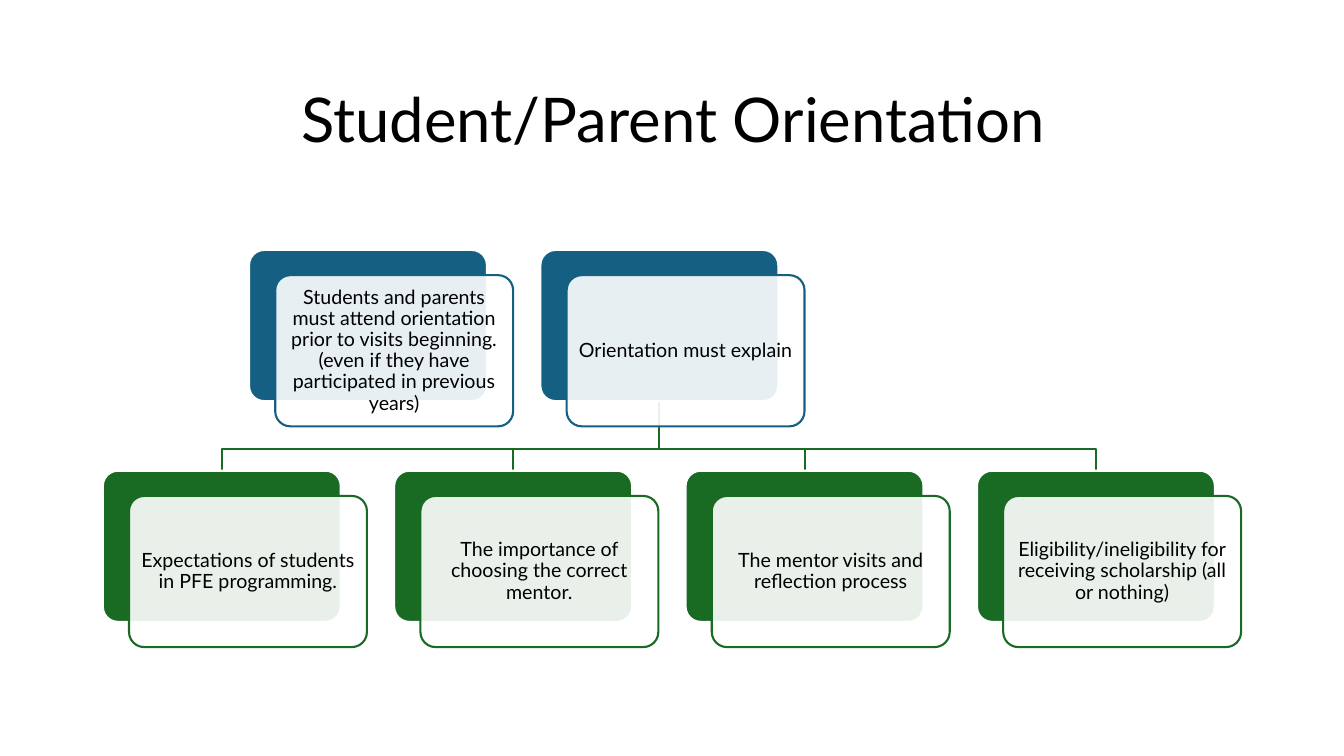
"""Build the Student/Parent Orientation hierarchy slide."""
from dataclasses import dataclass

from lxml import etree
from pptx import Presentation
from pptx import util as u
from pptx.dml.color import RGBColor
from pptx.enum import shapes, text
from pptx.oxml import ns

BLUE, GREEN, WHITE, BLACK = "156082", "196B24", "FFFFFF", "000000"
CARD_WIDTH, CARD_HEIGHT = 2.36, 1.5
FRONT_SHIFT_X, FRONT_SHIFT_Y = 0.26, 0.25
COLUMN_STEP = 2.89
TOP_ROW, BOTTOM_ROW = 2.48, 4.67
BRANCH_Y = 4.45
LINE_WIDTH = 1.5


@dataclass(frozen=True)
class Card:
    label: str
    left: float
    top: float
    color: str

    @property
    def center(self) -> float:
        return self.left + CARD_WIDTH / 2


def rgb(value: str) -> RGBColor:
    return RGBColor.from_string(value)


def set_values(target, values: dict) -> None:
    for name, value in values.items():
        setattr(target, name, value)


def set_line(shape, color: str) -> None:
    shape.line.color.rgb = rgb(color)
    shape.line.width = u.Pt(LINE_WIDTH)


def write_text(frame, content: str, size: float, margins: dict) -> None:
    set_values(frame, {"word_wrap": True, "auto_size": text.MSO_AUTO_SIZE.NONE,
                       "vertical_anchor": text.MSO_ANCHOR.MIDDLE, **margins})
    para = frame.paragraphs[0]
    set_values(para, {"alignment": text.PP_ALIGN.CENTER, "line_spacing": 0.9})
    span = para.add_run()
    span.text = content
    set_values(span.font, {"name": "Lato", "size": u.Pt(size), "bold": False})
    span.font.color.rgb = rgb(BLACK)


def add_title(page, content: str) -> None:
    title = page.shapes.title
    set_values(title, {"left": u.Inches(1.67), "top": u.Inches(0.6),
                       "width": u.Inches(10.02), "height": u.Inches(1.24)})
    write_text(title.text_frame, content, 44, {})


def add_box(page, left: float, top: float, fill: str, line: str):
    box = page.shapes.add_shape(
        shapes.MSO_SHAPE.ROUNDED_RECTANGLE, u.Inches(left), u.Inches(top),
        u.Inches(CARD_WIDTH), u.Inches(CARD_HEIGHT))
    box.adjustments[0] = 0.1
    box.shadow.inherit = False
    box.fill.solid()
    box.fill.fore_color.rgb = rgb(fill)
    set_line(box, line)
    return box


def set_opacity(box, percent: int) -> None:
    color = box.fill._xPr.find(ns.qn("a:solidFill"))[0]
    etree.SubElement(color, ns.qn("a:alpha"), val=str(percent * 1000))


def add_card(page, card: Card) -> None:
    add_box(page, card.left, card.top, card.color, WHITE)
    front = add_box(page, card.left + FRONT_SHIFT_X, card.top + FRONT_SHIFT_Y,
                    WHITE, card.color)
    set_opacity(front, 90)
    sides = ("left", "top", "right", "bottom")
    margins = {f"margin_{side}": u.Inches(0.06) for side in sides}
    write_text(front.text_frame, card.label, 14, margins)


def add_branch(page, parent: Card, child: Card) -> None:
    points = [(parent.center, parent.top + CARD_HEIGHT), (parent.center, BRANCH_Y),
              (child.center, BRANCH_Y), (child.center, child.top)]
    start, *rest = [(u.Inches(x), u.Inches(y)) for x, y in points]
    builder = page.shapes.build_freeform(*start)
    builder.add_line_segments(rest, close=False)
    branch = builder.convert_to_shape()
    branch.shadow.inherit = False
    branch.fill.background()
    set_line(branch, GREEN)


def make_row(labels: list[str], left: float, top: float, color: str) -> list[Card]:
    return [Card(label, left + index * COLUMN_STEP, top, color)
            for index, label in enumerate(labels)]


def main() -> None:
    deck = Presentation()
    set_values(deck, {"slide_width": u.Inches(13.33), "slide_height": u.Inches(7.5)})
    page = deck.slides.add_slide(deck.slide_layouts.get_by_name("Title Only"))
    add_title(page, "Student/Parent Orientation")

    requirements = make_row([
        "Students and parents must attend orientation prior to visits beginning. "
        "(even if they have participated in previous years)",
        "Orientation must explain",
    ], 2.47, TOP_ROW, BLUE)
    topics = make_row([
        "Expectations of students in PFE programming.",
        "The importance of choosing the correct mentor.",
        "The mentor visits and reflection process",
        "Eligibility/ineligibility for receiving scholarship (all or nothing)",
    ], 1.02, BOTTOM_ROW, GREEN)

    for topic in reversed(topics):
        add_branch(page, requirements[-1], topic)
    for card in requirements + topics:
        add_card(page, card)
    deck.save("out.pptx")


if __name__ == "__main__":
    main()
